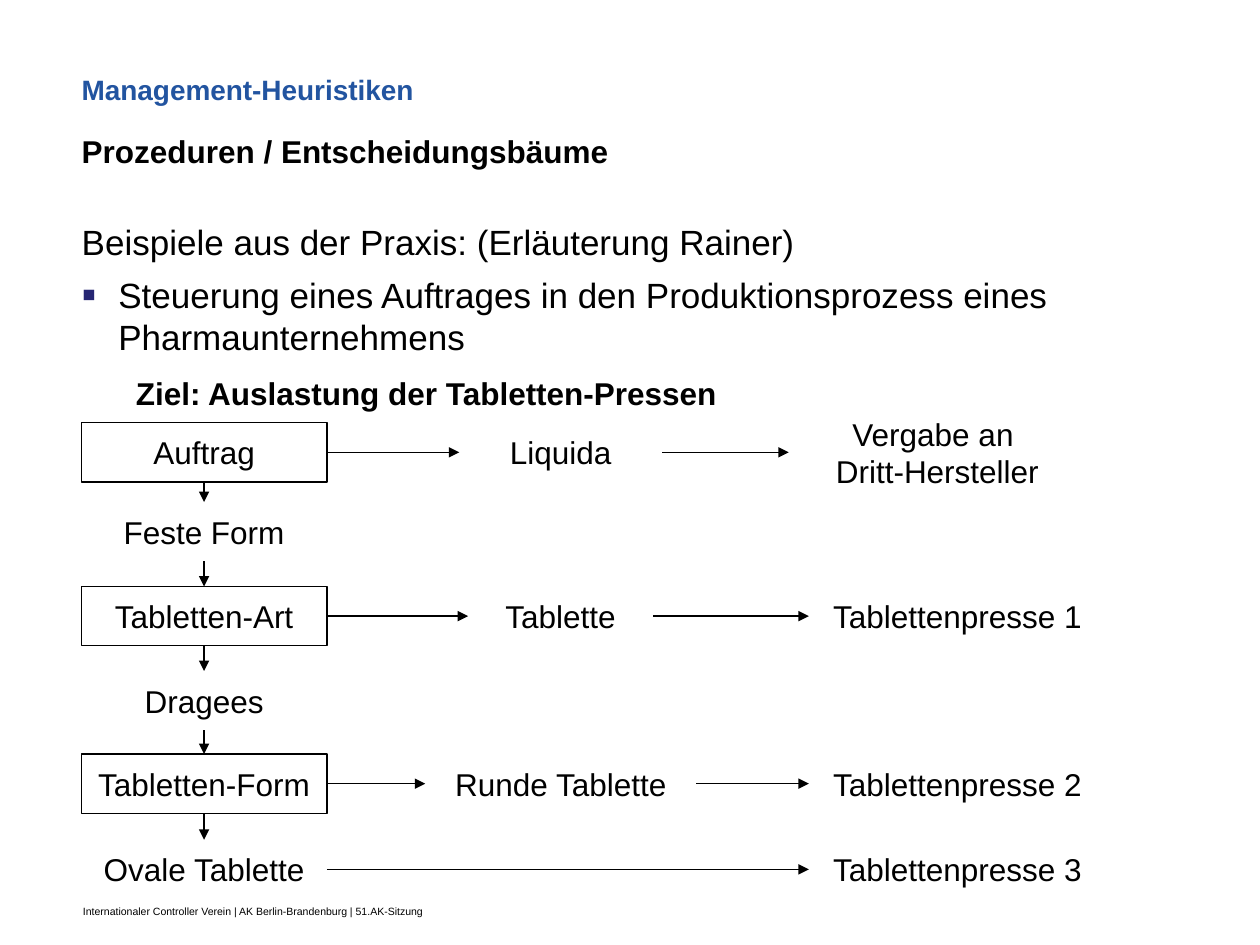
from lxml import etree
from pptx import Presentation
from pptx.dml.color import RGBColor
from pptx.enum.shapes import MSO_CONNECTOR as Connector, MSO_SHAPE as Shape
from pptx.enum.text import MSO_ANCHOR as Anchor, PP_ALIGN as Align
from pptx.oxml.ns import qn
from pptx.util import Inches, Pt

BLACK = RGBColor(0x00, 0x00, 0x00)
BLUE = RGBColor(0x22, 0x54, 0xA0)
BULLET_COLOR = "262673"
FONT = "Arial"
NODE_HEIGHT = 0.47
LEFT_CENTER = 1.62

# Left column, top to bottom: text, center y, width, has a frame
STEPS = [
    ("Auftrag", 3.59, 1.95, True),
    ("Feste Form", 4.22, 1.61, False),
    ("Tabletten-Art", 4.89, 1.95, True),
    ("Dragees", 5.56, 1.61, False),
    ("Tabletten-Form", 6.22, 1.95, True),
    ("Ovale Tablette", 6.9, 1.95, False),
]
# Per branching step: further nodes as (text, center x, width)
BRANCHES = {
    "Auftrag": [("Liquida", 4.45, 1.61),
                ("Vergabe an \vDritt-Hersteller", 7.44, 2.36)],
    "Tabletten-Art": [("Tablette", 4.45, 1.47),
                      ("Tablettenpresse 1", 7.6, 2.36)],
    "Tabletten-Form": [("Runde Tablette", 4.45, 2.15),
                       ("Tablettenpresse 2", 7.6, 2.36)],
    "Ovale Tablette": [("Tablettenpresse 3", 7.6, 2.36)],
}


def style(paragraph, size, color=BLACK, bold=False):
    font = paragraph.font
    font.name, font.size, font.bold = FONT, Pt(size), bold
    font.color.rgb = color


def add_text(slide, text, left, top, width, height, size,
             color=BLACK, bold=False, wrap=True, anchor=Anchor.TOP):
    shape = slide.shapes.add_textbox(
        Inches(left), Inches(top), Inches(width), Inches(height))
    frame = shape.text_frame
    frame.word_wrap = wrap
    frame.vertical_anchor = anchor
    frame.text = text
    style(frame.paragraphs[0], size, color, bold)
    return frame


def add_bullet(paragraph):
    properties = paragraph._p.get_or_add_pPr()
    properties.set("marL", str(Inches(0.29)))
    properties.set("indent", str(-Inches(0.29)))
    color = etree.SubElement(properties, qn("a:buClr"))
    etree.SubElement(color, qn("a:srgbClr"), val=BULLET_COLOR)
    etree.SubElement(properties, qn("a:buSzPct"), val="120000")
    etree.SubElement(properties, qn("a:buFont"), typeface=FONT)
    etree.SubElement(properties, qn("a:buChar"), char="▪")


def add_node(slide, text, center_x, center_y, width, framed=False):
    shape = slide.shapes.add_shape(
        Shape.RECTANGLE, Inches(center_x - width / 2),
        Inches(center_y - NODE_HEIGHT / 2), Inches(width), Inches(NODE_HEIGHT))
    shape.shadow.inherit = False
    shape.fill.background()
    if framed:
        shape.line.color.rgb = BLACK
        shape.line.width = Pt(0.75)
    else:
        shape.line.fill.background()
    frame = shape.text_frame
    frame.word_wrap = True
    frame.vertical_anchor = Anchor.MIDDLE
    frame.text = text
    paragraph = frame.paragraphs[0]
    paragraph.alignment = Align.CENTER
    style(paragraph, 18)


def add_arrow(slide, x1, y1, x2, y2):
    arrow = slide.shapes.add_connector(
        Connector.STRAIGHT, Inches(x1), Inches(y1), Inches(x2), Inches(y2))
    arrow.line.color.rgb = BLACK
    arrow.line.width = Pt(0.75)
    etree.SubElement(arrow.line._get_or_add_ln(), qn("a:tailEnd"), type="triangle")
    etree.SubElement(arrow._element.spPr, qn("a:effectLst"))


def add_body(slide):
    frame = add_text(slide, "Prozeduren / Entscheidungsbäume",
                     0.55, 1, 8.82, 1.83, 18, bold=True)
    example = frame.add_paragraph()
    example.text = "Beispiele aus der Praxis: (Erläuterung Rainer)"
    example.space_before = Pt(29)
    example.space_after = Pt(6)
    style(example, 20)
    item = frame.add_paragraph()
    item.text = ("Steuerung eines Auftrages in den Produktionsprozess eines "
                 "Pharmaunternehmens")
    add_bullet(item)
    item.space_after = Pt(6)
    style(item, 20)


def add_tree(slide):
    half = NODE_HEIGHT / 2
    previous_y = None
    for step, y, width, framed in STEPS:
        add_node(slide, step, LEFT_CENTER, y, width, framed)
        if previous_y is not None:
            add_arrow(slide, LEFT_CENTER, previous_y + half, LEFT_CENTER, y - half)
        previous_y = y

        # Branch to the right, each node linked to the one before
        right_edge = LEFT_CENTER + width / 2
        for text, x, branch_width in BRANCHES.get(step, []):
            add_node(slide, text, x, y, branch_width)
            add_arrow(slide, right_edge, y, x - branch_width / 2, y)
            right_edge = x + branch_width / 2


def main():
    presentation = Presentation()
    presentation.slide_width = Inches(10)
    presentation.slide_height = Inches(7.5)
    slide = presentation.slides.add_slide(presentation.slide_layouts[6])

    # Headings and introduction
    add_text(slide, "Management-Heuristiken", 0.55, 0.53, 7.74, 0.44, 16,
             color=BLUE, bold=True)
    add_body(slide)
    add_text(slide, "Ziel: Auslastung der Tabletten-Pressen",
             0.98, 2.88, 5.75, 0.47, 18, bold=True, anchor=Anchor.MIDDLE)

    # Decision tree
    add_tree(slide)

    # Footer
    add_text(slide,
             "Internationaler Controller Verein | AK Berlin-Brandenburg | 51.AK-Sitzung",
             0.56, 7.13, 2.95, 0.2, 6, wrap=False)

    presentation.save("out.pptx")


if __name__ == "__main__":
    main()
